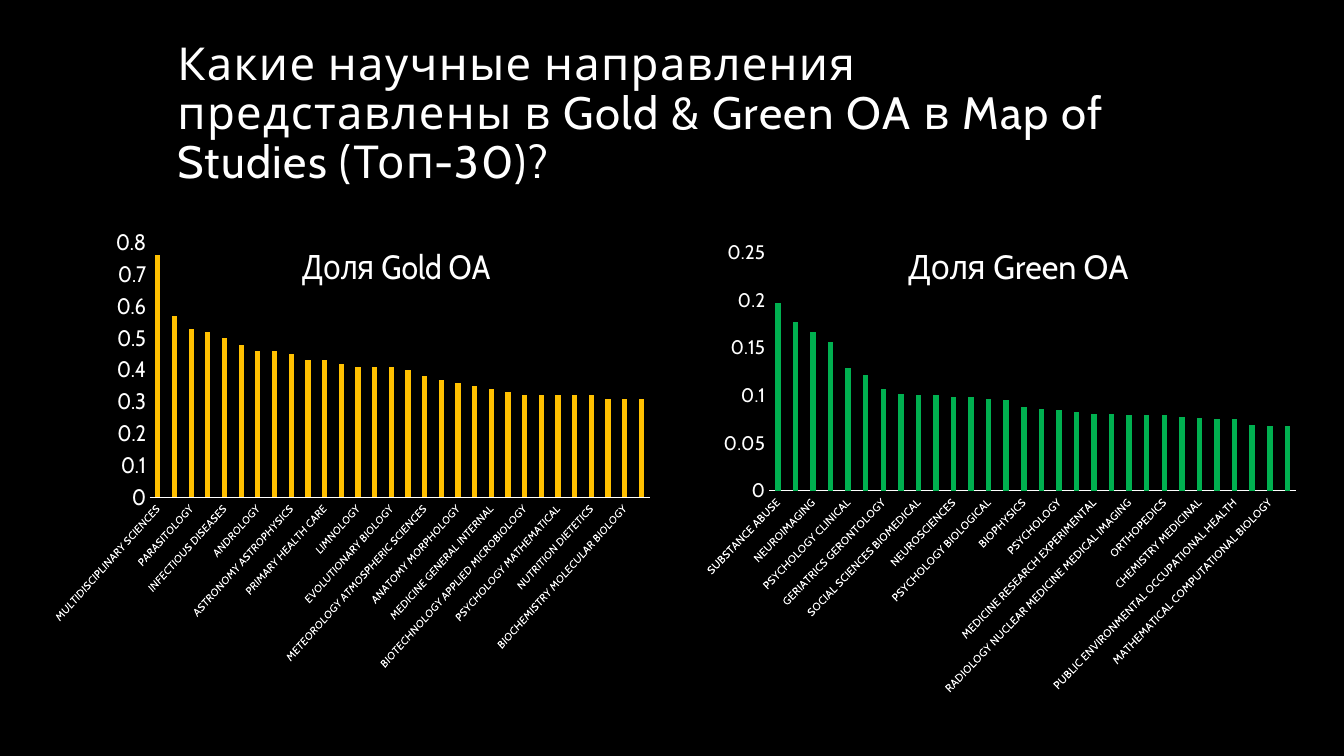
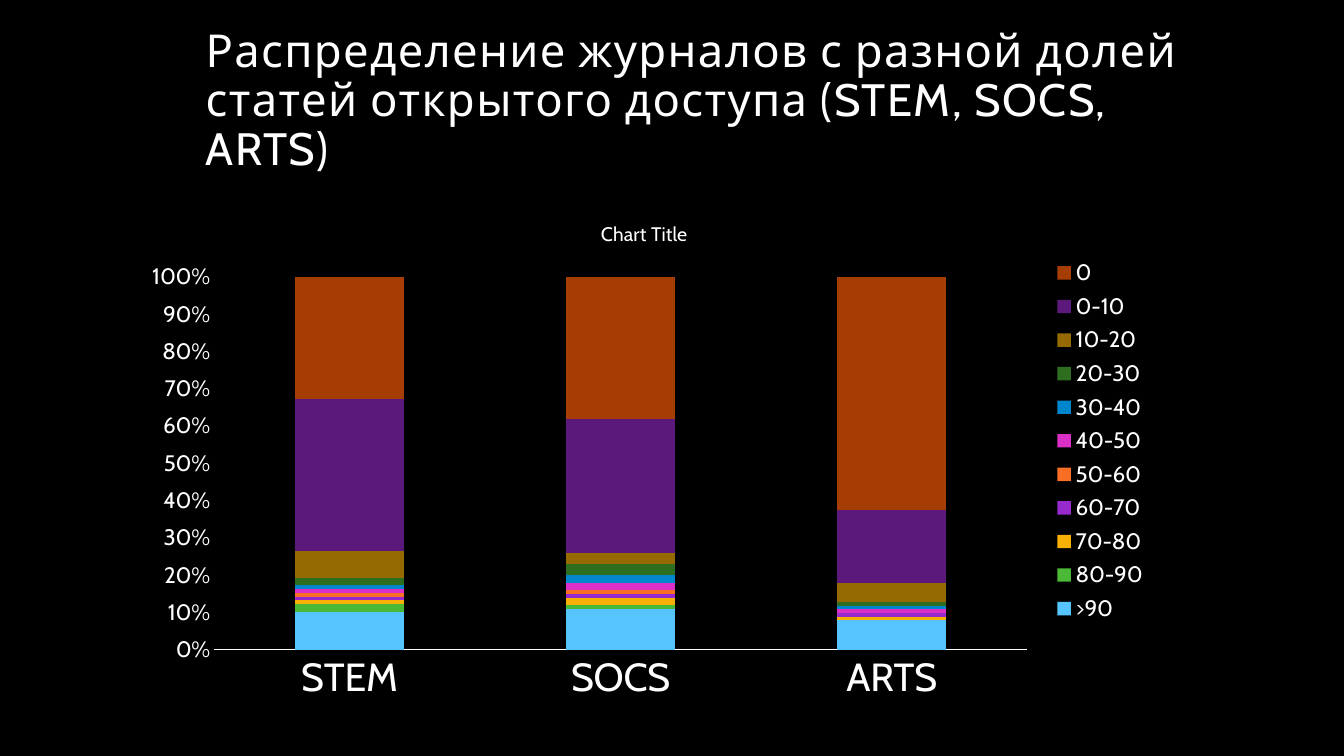
from pptx import Presentation, util as u
from pptx.chart import data
from pptx.dml import color
from pptx.enum import chart as charts, text
from pptx.oxml import ns, xmlchemy

FONT = "Cabin"
COLOURS = {
    "background": "000000", "text": "FFFFFF", "gold": "FFC000", "green": "00B050",
}
NO_TICKS = charts.XL_TICK_MARK.NONE

# Subject shares, highest first
GOLD_SHARES = {
    "MULTIDISCIPLINARY SCIENCES": 0.76, "MICROBIOLOGY": 0.57, "PARASITOLOGY": 0.53,
    "TROPICAL MEDICINE": 0.52, "INFECTIOUS DISEASES": 0.5, "VIROLOGY": 0.48,
    "ANDROLOGY": 0.46, "MATHEMATICAL COMPUTATIONAL BIOLOGY": 0.46,
    "ASTRONOMY ASTROPHYSICS": 0.45, "DEVELOPMENTAL BIOLOGY": 0.43,
    "PRIMARY HEALTH CARE": 0.43, "HEALTH POLICY SERVICES": 0.42, "LIMNOLOGY": 0.41,
    "HEALTH CARE SCIENCES SERVICES": 0.41, "EVOLUTIONARY BIOLOGY": 0.41,
    "GENETICS HEREDITY": 0.4, "METEOROLOGY ATMOSPHERIC SCIENCES": 0.38,
    "PHYSIOLOGY": 0.37, "ANATOMY MORPHOLOGY": 0.36, "CELL BIOLOGY": 0.35,
    "MEDICINE GENERAL INTERNAL": 0.34, "CELL TISSUE ENGINEERING": 0.33,
    "BIOTECHNOLOGY APPLIED MICROBIOLOGY": 0.32, "ANESTHESIOLOGY": 0.32,
    "PSYCHOLOGY MATHEMATICAL": 0.32, "IMMUNOLOGY": 0.32, "NUTRITION DIETETICS": 0.32,
    "CRYSTALLOGRAPHY": 0.31, "BIOCHEMISTRY MOLECULAR BIOLOGY": 0.31,
    "OCEANOGRAPHY": 0.31,
}
GREEN_SHARES = {
    "SUBSTANCE ABUSE": 0.197, "AUDIOLOGY SPEECH LANGUAGE PATHOLOGY": 0.177,
    "NEUROIMAGING": 0.167, "PSYCHOLOGY DEVELOPMENTAL": 0.156,
    "PSYCHOLOGY CLINICAL": 0.129, "BEHAVIORAL SCIENCES": 0.122,
    "GERIATRICS GERONTOLOGY": 0.107, "FAMILY STUDIES": 0.102,
    "SOCIAL SCIENCES BIOMEDICAL": 0.101, "CELL TISSUE ENGINEERING": 0.101,
    "NEUROSCIENCES": 0.099, "BIOCHEMICAL RESEARCH METHODS": 0.098,
    "PSYCHOLOGY BIOLOGICAL": 0.096, "ENGINEERING BIOMEDICAL": 0.095,
    "BIOPHYSICS": 0.088, "PSYCHOLOGY EXPERIMENTAL": 0.086, "PSYCHOLOGY": 0.085,
    "PSYCHIATRY": 0.083, "MEDICINE RESEARCH EXPERIMENTAL": 0.081,
    "CELL BIOLOGY": 0.081, "RADIOLOGY NUCLEAR MEDICINE MEDICAL IMAGING": 0.08,
    "MEDICAL INFORMATICS": 0.08, "ORTHOPEDICS": 0.08,
    "MATERIALS SCIENCE BIOMATERIALS": 0.078, "CHEMISTRY MEDICINAL": 0.077,
    "BIOCHEMISTRY MOLECULAR BIOLOGY": 0.075,
    "PUBLIC ENVIRONMENTAL OCCUPATIONAL HEALTH": 0.075, "GENETICS HEREDITY": 0.069,
    "MATHEMATICAL COMPUTATIONAL BIOLOGY": 0.068, "DEMOGRAPHY": 0.068,
}

# Journals by open access share: name, percentages per field, colour
FIELDS = ["STEM", "SOCS", "ARTS"]
SHARE_BANDS = [
    (">90", (10, 11, 8), "56C5FF"), ("80-90", (2, 1, 0), "4BB836"),
    ("70-80", (1, 2, 1), "F8B004"), ("60-70", (1, 1, 1), "972ACD"),
    ("50-60", (1, 1, 0), "F86E24"), ("40-50", (1, 2, 1), "DB30C7"),
    ("30-40", (1, 2, 1), "0086CD"), ("20-30", (2, 3, 1), "2D6E20"),
    ("10-20", (7, 3, 5), "956A02"), ("0-10", (40, 36, 20), "5B197B"),
    ("0", (32, 38, 63), "A53D05"),
]


def rgb(value):
    return color.RGBColor.from_string(value)


def style_font(font, size):
    font.name = FONT
    font.size = u.Pt(size)
    font.bold = False
    font.color.rgb = rgb(COLOURS["text"])


def add_titled_slide(presentation, title, left, top):
    slide = presentation.slides.add_slide(presentation.slide_layouts[5])
    shape = slide.shapes.title
    shape.left, shape.top = u.Inches(left), u.Inches(top)
    shape.width, shape.height = u.Inches(10), u.Inches(1.5)
    frame = shape.text_frame
    frame.text = title
    frame.word_wrap = True
    frame.auto_size = text.MSO_AUTO_SIZE.NONE
    frame.vertical_anchor = text.MSO_ANCHOR.BOTTOM
    paragraph = frame.paragraphs[0]
    paragraph.alignment = text.PP_ALIGN.LEFT
    paragraph.line_spacing = 0.9
    font = paragraph.runs[0].font
    style_font(font, 32.4)
    font._element.set("spc", "100")
    return slide


def set_layout(parent, index, **settings):
    """Place a chart part by fractions of the chart area."""
    layout = parent.find(ns.qn("c:layout"))
    if layout is None:
        layout = xmlchemy.OxmlElement("c:layout")
        parent.insert(index, layout)
    manual = xmlchemy.OxmlElement("c:manualLayout")
    layout.append(manual)
    for tag, value in settings.items():
        setting = xmlchemy.OxmlElement(f"c:{tag}")
        setting.set("val", str(value))
        manual.append(setting)


def add_column_chart(slide, kind, box, categories, series, plot_box, gap, overlap,
                     category_size, value_size, number_format):
    chart_data = data.CategoryChartData()
    chart_data.categories = categories
    for name, values, _ in series:
        chart_data.add_series(name, values)
    chart = slide.shapes.add_chart(kind, *map(u.Inches, box), chart_data).chart
    style_font(chart.font, 10)
    chart.has_legend = False

    # Columns
    plot = chart.plots[0]
    plot.vary_by_categories = False
    plot.gap_width, plot.overlap = gap, overlap
    for columns, (_, _, fill) in zip(plot.series, series):
        columns.format.fill.solid()
        columns.format.fill.fore_color.rgb = rgb(fill)
    left, top, width, height = plot_box
    set_layout(chart.element.xpath(".//c:plotArea")[0], 0, layoutTarget="inner",
               xMode="edge", yMode="edge", x=left, y=top, w=width, h=height)

    # Axes
    for axis, size in ((chart.category_axis, category_size),
                       (chart.value_axis, value_size)):
        axis.major_tick_mark = axis.minor_tick_mark = NO_TICKS
        axis.has_major_gridlines = False
        style_font(axis.tick_labels.font, size)
    line = chart.category_axis.format.line
    line.color.rgb, line.width = rgb(COLOURS["text"]), u.Pt(0.75)
    chart.value_axis.format.line.fill.background()
    chart.value_axis.minimum_scale = 0
    labels = chart.value_axis.tick_labels
    labels.number_format, labels.number_format_is_linked = number_format, False
    return chart


def add_chart_title(chart, title, size):
    chart.has_title = True
    frame = chart.chart_title.text_frame
    frame.text = title
    style_font(frame.paragraphs[0].runs[0].font, size)


def add_share_chart(slide, box, shares, fill, title, title_left, plot_box,
                    value_size, maximum, step):
    chart = add_column_chart(
        slide, charts.XL_CHART_TYPE.COLUMN_CLUSTERED, box, list(shares),
        [("Series 1", list(shares.values()), fill)], plot_box, 219, -27,
        8, value_size, "General")
    chart.value_axis.maximum_scale = maximum
    chart.value_axis.major_unit = step
    add_chart_title(chart, title, 24)
    set_layout(chart.chart_title.element, 1, xMode="edge", yMode="edge",
               x=title_left, y=0.02)
    # Slanted subject names
    chart.element.xpath(".//c:catAx/c:txPr/a:bodyPr")[0].set("rot", "-2700000")


def add_journal_chart(slide):
    chart = add_column_chart(
        slide, charts.XL_CHART_TYPE.COLUMN_STACKED_100, (1.31, 2, 10.16, 5.05),
        FIELDS, SHARE_BANDS, (0.08, 0.148, 0.794, 0.733), 150, 100, 28, 16, "0%")
    chart.value_axis.major_unit = 0.1
    add_chart_title(chart, "Chart Title", 14)
    chart.has_legend = True
    chart.legend.position = charts.XL_LEGEND_POSITION.RIGHT
    chart.legend.include_in_layout = False
    style_font(chart.legend.font, 16)
    set_layout(chart.element.xpath(".//c:legend")[0], 1, xMode="edge", yMode="edge",
               x=0.895, y=0.1, w=0.1, h=0.74)


def main():
    presentation = Presentation()
    presentation.slide_width = u.Inches(13.33)
    presentation.slide_height = u.Inches(7.5)
    background = presentation.slide_master.background.fill
    background.solid()
    background.fore_color.rgb = rgb(COLOURS["background"])

    # Subjects in gold and green open access
    slide = add_titled_slide(
        presentation,
        "Какие научные направления представлены в Gold & Green OA в Map of "
        "Studies (Топ-30)?", 1.66, 0.42)
    add_share_chart(slide, (0.52, 2.25, 6.06, 4.96), GOLD_SHARES, COLOURS["gold"],
                    "Доля Gold OA", 0.33, (0.061, 0.032, 0.914, 0.509), 16, 0.8, 0.1)
    add_share_chart(slide, (6.98, 2.25, 6.02, 5.12), GREEN_SHARES, COLOURS["green"],
                    "Доля Green OA", 0.3, (0.071, 0.05, 0.904, 0.462), 14, 0.25, 0.05)

    # Journals by open access share
    slide = add_titled_slide(
        presentation,
        "Распределение журналов с разной долей статей открытого доступа "
        f"({', '.join(FIELDS)})", 1.94, 0.29)
    add_journal_chart(slide)

    presentation.save("out.pptx")


if __name__ == "__main__":
    main()
